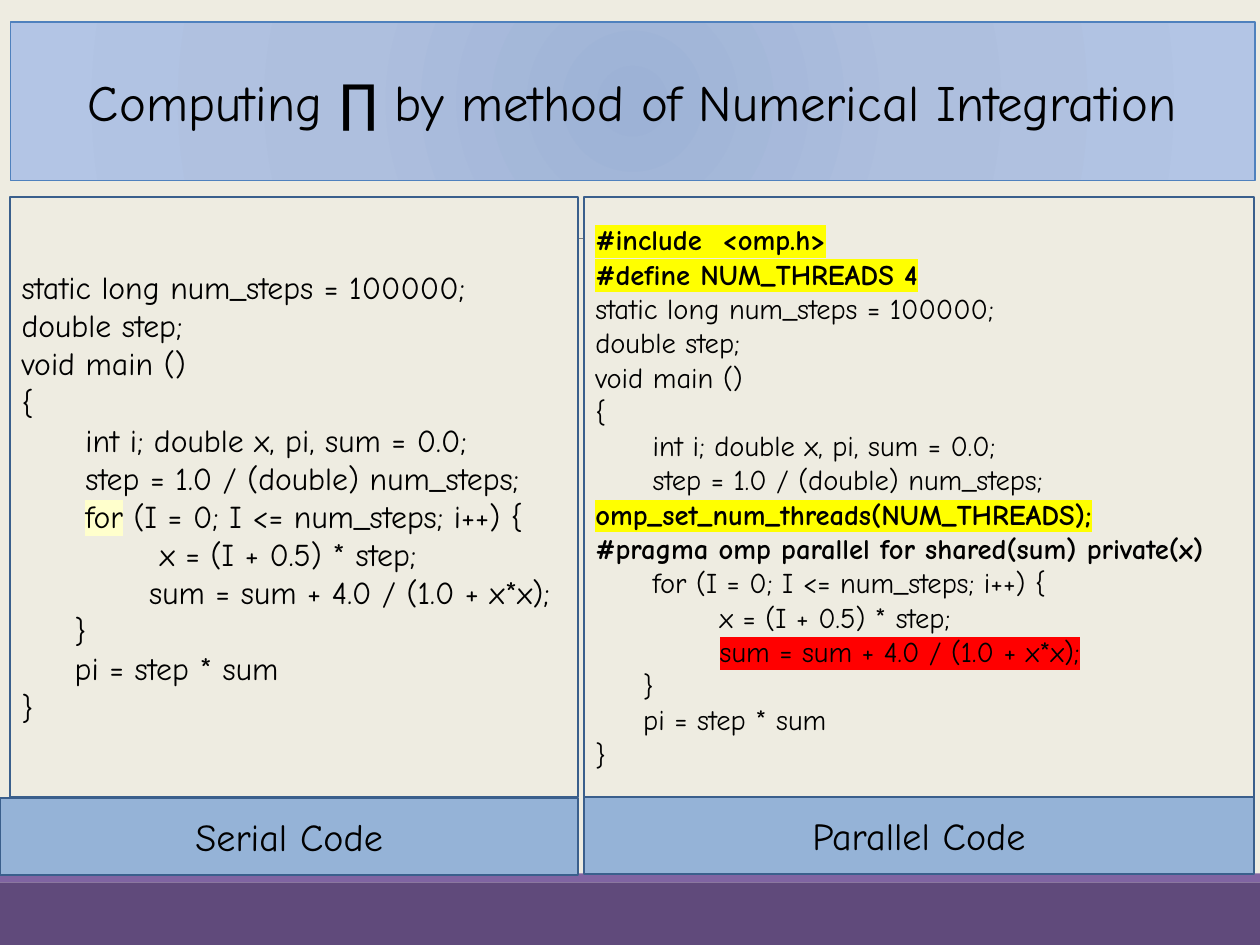
from pptx import Presentation
from pptx.dml.color import RGBColor
from pptx.enum.shapes import MSO_CONNECTOR as Connector, MSO_SHAPE as Shape
from pptx.enum.text import MSO_ANCHOR as Anchor, MSO_AUTO_SIZE as AutoSize, PP_ALIGN as Align
from pptx.oxml import parse_xml
from pptx.oxml.ns import nsdecls, qn
from pptx.oxml.xmlchemy import OxmlElement
from pptx.util import Inches, Pt

PAGE_WIDTH = 28 / 2.54
PAGE_HEIGHT = 21 / 2.54
FONT = "Comic Neue"
BORDER = "3A5F8C"
CREAM = "EEECE1"
YELLOW = "FFFF00"
INDENT_PER_POINT = 0.335 / 72

SERIAL_CODE = [
    (0, [("static long num_steps = 100000;", False, None)]),
    (0, [("double step;", False, None)]),
    (0, [("void main ()", False, None)]),
    (0, [("{", False, None)]),
    (6, [("int i; double x, pi, sum = 0.0;", False, None)]),
    (6, [("step = 1.0 / (double) num_steps;", False, None)]),
    (6, [("for", False, "FFFFCC"), (" (I = 0; I <= num_steps; i++) {", False, None)]),
    (13, [("x = (I + 0.5) * step;", False, None)]),
    (12, [("sum = sum + 4.0 / (1.0 + x*x);", False, None)]),
    (5, [("}", False, None)]),
    (5, [("pi = step * sum", False, None)]),
    (0, [("}", False, None)]),
]
PARALLEL_CODE = [
    (0, [("#include  <omp.h>", True, YELLOW)]),
    (0, [("#define NUM_THREADS 4", True, YELLOW)]),
    *SERIAL_CODE[:6],
    (0, [("omp_set_num_threads(NUM_THREADS);", True, YELLOW)]),
    (0, [("#pragma omp parallel for shared(sum) private(x)", True, None)]),
    (6, [("for (I = 0; I <= num_steps; i++) {", False, None)]),
    SERIAL_CODE[7],
    (13, [("sum = sum + 4.0 / (1.0 + x*x);", False, "FF0000")]),
    *SERIAL_CODE[9:],
]


def color(value):
    return RGBColor.from_string(value)


def add_box(page, left, top, width, height, fill, border=None):
    box = page.shapes.add_shape(
        Shape.RECTANGLE, Inches(left), Inches(top), Inches(width), Inches(height))
    box.shadow.inherit = False
    box.fill.solid()
    box.fill.fore_color.rgb = color(fill)
    if border:
        box.line.color.rgb = color(border)
        box.line.width = Pt(1.25)
    else:
        box.line.fill.background()
    return box


def add_span(para, text, size, bold=False, highlight=None):
    span = para.add_run()
    span.text = text
    span.font.size = Pt(size)
    span.font.bold = bold
    span.font.color.rgb = color("000000")
    span.font.name = FONT
    if highlight:
        mark = OxmlElement("a:highlight")
        shade = OxmlElement("a:srgbClr")
        shade.set("val", highlight)
        mark.append(shade)
        span.font._element.find(qn("a:solidFill")).addnext(mark)


def add_label(box, text, size):
    frame = box.text_frame
    frame.word_wrap = True
    frame.auto_size = AutoSize.NONE
    frame.vertical_anchor = Anchor.MIDDLE
    para = frame.paragraphs[0]
    para.alignment = Align.CENTER
    add_span(para, text, size)


def add_code_panel(page, left, width, size, code):
    frame = add_box(page, left, 1.72, width, 5.25, CREAM, BORDER).text_frame
    frame.word_wrap = True
    frame.vertical_anchor = Anchor.MIDDLE
    for number, (indent, spans) in enumerate(code):
        para = frame.add_paragraph() if number else frame.paragraphs[0]
        para.alignment = Align.LEFT
        margin = Inches(indent * size * INDENT_PER_POINT)
        para._p.get_or_add_pPr().set("marL", str(margin))
        for text, bold, highlight in spans:
            add_span(para, text, size, bold, highlight)


def add_caption(page, left, top, width, text):
    add_label(add_box(page, left, top, width, 0.68, "95B3D7", BORDER), text, 24)


def add_rule(page, left, right, top):
    rule = page.shapes.add_connector(
        Connector.STRAIGHT, Inches(left), Inches(top), Inches(right), Inches(top))
    rule.line.color.rgb = color("808080")
    rule.line.width = Pt(0.5)
    rule._element.spPr.append(OxmlElement("a:effectLst"))


def fill_radial(shape, stops):
    marks = "".join(
        f'<a:gs pos="{percent * 1000}"><a:srgbClr val="{value}"/></a:gs>'
        for percent, value in stops)
    shape._element.spPr.append(parse_xml(
        f'<a:gradFill {nsdecls("a")} rotWithShape="1"><a:gsLst>{marks}</a:gsLst>'
        '<a:path path="circle"><a:fillToRect l="100000" t="100000" r="100000" b="100000"/>'
        '</a:path></a:gradFill>'))


def set_title(page, text):
    title = page.shapes.title
    title.left, title.top = Inches(0.09), Inches(0.19)
    title.width, title.height = Inches(10.89), Inches(1.39)
    fill_radial(title, [(0, "9DB2D6"), (45, "AEBFDE"), (100, "B3C5E5")])
    title.line.color.rgb = color("4F81BD")
    title.line.width = Pt(1)
    add_label(title, text, 32)


def main():
    deck = Presentation()
    deck.slide_width, deck.slide_height = Inches(PAGE_WIDTH), Inches(PAGE_HEIGHT)
    page = deck.slides.add_slide(deck.slide_layouts.get_by_name("Title Only"))
    page.background.fill.solid()
    page.background.fill.fore_color.rgb = color(CREAM)

    add_box(page, 0, 7.72, PAGE_WIDTH, PAGE_HEIGHT - 7.72, "604A7B")
    add_box(page, 0, 7.64, PAGE_WIDTH, 0.08, "8064A2")
    add_rule(page, 1.08, 10.09, 2.09)
    set_title(page, "Computing ∏ by method of Numerical Integration")
    add_code_panel(page, 0.09, 4.97, 20, SERIAL_CODE)
    add_code_panel(page, 5.11, 5.86, 18, PARALLEL_CODE)
    add_caption(page, 0, 6.98, 5.06, "Serial Code")
    add_caption(page, 5.11, 6.97, 5.86, "Parallel Code")
    deck.save("out.pptx")


if __name__ == "__main__":
    main()
